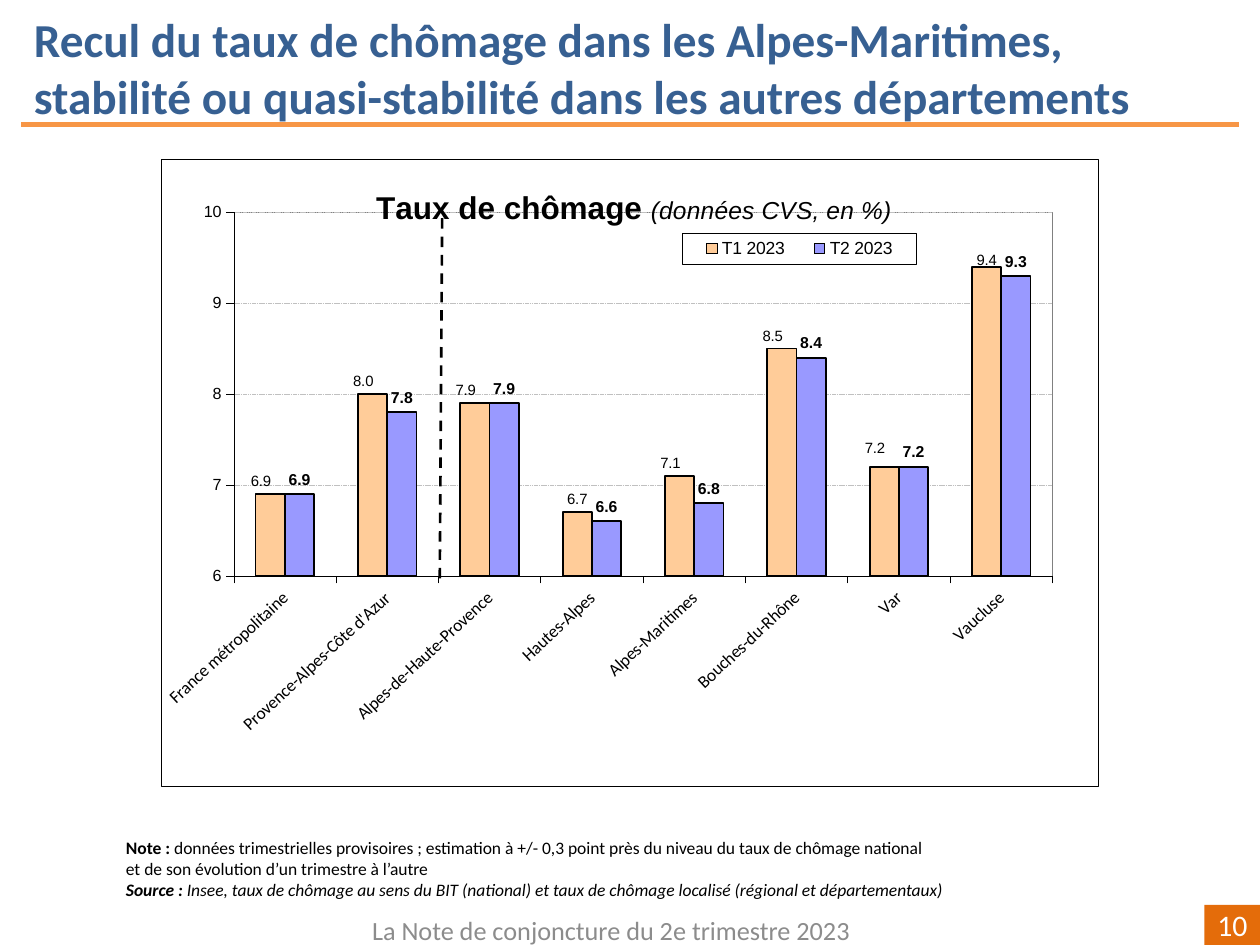
from lxml import etree
from pptx import Presentation
from pptx import util as u
from pptx.chart import data as chart_data
from pptx.dml import color
from pptx.enum import chart as charts, dml, shapes, text
from pptx.oxml import ns, parse_xml

Pt = u.Pt
COLOURS = {
    "title": "376092", "rule": "F79646", "badge": "E46C0A", "footer": "8C8C8C",
    "black": "000000", "white": "FFFFFF", "grid": "C0C0C0", "frame": "808080",
    "first": "FFCC99", "second": "9999FF", "highlight": "FFFF00",
}
TITLE = [
    [("Recul du taux de chômage dans les Alpes-Maritimes,", {})],
    [("stabilité ou quasi-stabilité dans les autres départements", {})],
]
NOTES = [
    [("Note : ", {"bold": True}),
     ("données trimestrielles provisoires ; estimation à +/- 0,3 point près du niveau du taux de chômage national", {})],
    [("et de son évolution d’un trimestre à l’autre", {})],
    [("Source : ", {"bold": True, "italic": True}),
     ("Insee, taux de chômage au sens du BIT (national) et taux de chômage localisé (régional et départementaux)",
      {"italic": True})],
]
FOOTER = [[("La Note de conjoncture du 2e trimestre 2023", {})]]
PAGE_NUMBER = [[("10", {})]]
CHART_TITLE = [[("Taux de chômage ", {"size": 18, "bold": True}),
                ("(données CVS, en %)", {"size": 14, "italic": True})]]
AREAS = ["France métropolitaine", "Provence-Alpes-Côte d'Azur", "Alpes-de-Haute-Provence",
         "Hautes-Alpes", "Alpes-Maritimes", "Bouches-du-Rhône", "Var", "Vaucluse"]
RATES = {
    "T1 2023": [6.9, 8.0, 7.9, 6.7, 7.1, 8.5, 7.2, 9.4],
    "T2 2023": [6.9, 7.8, 7.9, 6.6, 6.8, 8.4, 7.2, 9.3],
}
STYLES = [("first", 8.5, False), ("second", 9, True)]
LABEL_SHIFTS = {0: (-0.01, 0), 1: (-0.01, 0), 2: (-0.01, 0), 4: (-0.01, 0),
                5: (-0.01, 0), 6: (-0.01, -0.01), 7: (0, 0.01)}
HIGHLIGHTED = [0, 1]


def rgb(name):
    return color.RGBColor.from_string(COLOURS[name])


def style_font(font, size, colour="black", face="Arial", bold=False, italic=False):
    font.size, font.name, font.bold, font.italic = Pt(size), face, bold, italic
    font.color.rgb = rgb(colour)


def write(frame, paragraphs, align=text.PP_ALIGN.LEFT, **style):
    for index, spans in enumerate(paragraphs):
        para = frame.paragraphs[0] if index == 0 else frame.add_paragraph()
        para.alignment = align
        for words, changes in spans:
            span = para.add_run()
            span.text = words
            style_font(span.font, **{**style, **changes})


def set_frame(frame, anchor, margins=(7.2, 3.6, 7.2, 3.6)):
    frame.word_wrap = True
    frame.auto_size = text.MSO_AUTO_SIZE.NONE
    frame.vertical_anchor = anchor
    (frame.margin_left, frame.margin_top,
     frame.margin_right, frame.margin_bottom) = map(Pt, margins)
    return frame


def add_text(page, place, paragraphs, anchor, margins=(7.2, 3.6, 7.2, 3.6), **style):
    box = page.shapes.add_textbox(*map(Pt, place))
    write(set_frame(box.text_frame, anchor, margins), paragraphs, **style)


def add_line(page, ends, colour, width, dash=None):
    line = page.shapes.add_connector(shapes.MSO_CONNECTOR.STRAIGHT, *map(Pt, ends))
    line.line.color.rgb, line.line.width = rgb(colour), Pt(width)
    if dash:
        line.line.dash_style = dash
    etree.SubElement(line._element.spPr, ns.qn("a:effectLst"))


def chart_xml(tag, content):
    return parse_xml(f'<c:{tag} {ns.nsdecls("c", "a")}>{content}</c:{tag}>')


def layout(x, y, width=None, height=None, inner=False, edge=True):
    parts = ['<c:layoutTarget val="inner"/>'] if inner else []
    if edge:
        parts += ['<c:xMode val="edge"/>', '<c:yMode val="edge"/>']
    sizes = {"x": x, "y": y, "w": width, "h": height}
    parts += [f'<c:{key} val="{value}"/>' for key, value in sizes.items() if value is not None]
    return chart_xml("layout", f'<c:manualLayout>{"".join(parts)}</c:manualLayout>')


def area(fill, line=None):
    paint = '<a:solidFill><a:srgbClr val="{}"/></a:solidFill>'
    border = f'<a:ln w="3175">{paint.format(COLOURS[line])}</a:ln>' if line else ""
    return chart_xml("spPr", paint.format(COLOURS[fill]) + border)


def replace_layout(parent, new, before):
    for old in parent.findall(ns.qn("c:layout")):
        parent.remove(old)
    if before is None:
        parent.insert(0, new)
    else:
        parent.find(ns.qn(before)).addnext(new)


def format_label(series, index, size, bold, shift=None, fill=None):
    label = series.points[index].data_label
    style_font(label.font, size, bold=bold)
    label.position = charts.XL_LABEL_POSITION.OUTSIDE_END
    anchor = series._element.xpath(f'c:dLbls/c:dLbl/c:idx[@val="{index}"]')[0]
    number = chart_xml("numFmt", "")
    number.set("formatCode", "0.0")
    number.set("sourceLinked", "0")
    parts = [layout(*shift, edge=False)] if shift else []
    parts.append(number)
    if fill:
        parts.append(area(fill))
    for part in reversed(parts):
        anchor.addnext(part)


def format_axis(axis, size, face):
    style_font(axis.tick_labels.font, size, face=face)
    axis.major_tick_mark = charts.XL_TICK_MARK.OUTSIDE
    axis.minor_tick_mark = charts.XL_TICK_MARK.NONE
    axis.format.line.color.rgb, axis.format.line.width = rgb("black"), Pt(0.25)


def add_rate_chart(page):
    source = chart_data.CategoryChartData(number_format="0.0")
    source.categories = AREAS
    for name, values in RATES.items():
        source.add_series(name, values)
    chart = page.shapes.add_chart(charts.XL_CHART_TYPE.COLUMN_CLUSTERED,
                                  *map(Pt, (92.2, 90.8, 535.6, 358.4)), source).chart
    style_font(chart.font, 8.5)
    chart.has_title = True
    write(chart.chart_title.text_frame, CHART_TITLE, text.PP_ALIGN.CENTER)
    title = chart.chart_title._element
    replace_layout(title, layout(0.225, 0.04), "c:tx")
    for overlay in title.findall(ns.qn("c:overlay")):
        overlay.set("val", "1")
    chart.has_legend = True
    legend = chart.legend
    legend.position = charts.XL_LEGEND_POSITION.RIGHT
    legend.include_in_layout = False
    style_font(legend.font, 10)
    replace_layout(legend._element, layout(0.556, 0.118, 0.25, 0.05), "c:legendPos")
    legend._element.find(ns.qn("c:overlay")).addnext(area("white", "black"))

    format_axis(chart.category_axis, 10, "Calibri")
    chart.category_axis._element.xpath("c:txPr/a:bodyPr")[0].set("rot", "-2580000")
    values = chart.value_axis
    format_axis(values, 9.2, "Arial")
    values.minimum_scale, values.maximum_scale, values.major_unit = 6, 10, 1
    values.tick_labels.number_format = "0"
    values.tick_labels.number_format_is_linked = False
    grid = values.major_gridlines.format.line
    grid.color.rgb, grid.width = rgb("grid"), Pt(0.25)
    grid.dash_style = dml.MSO_LINE.SQUARE_DOT

    plot = chart.plots[0]
    plot.gap_width, plot.overlap, plot.vary_by_categories = 150, 0, False
    for series, (colour, size, bold) in zip(plot.series, STYLES):
        series.format.fill.solid()
        series.format.fill.fore_color.rgb = rgb(colour)
        series.format.line.color.rgb, series.format.line.width = rgb("black"), Pt(1)
        labels = series.data_labels
        labels.show_value = True
        labels.number_format, labels.number_format_is_linked = "0.0", False
        labels.position = charts.XL_LABEL_POSITION.OUTSIDE_END
        style_font(labels.font, size, bold=bold)
    first, second = plot.series
    for index, shift in LABEL_SHIFTS.items():
        format_label(first, index, 8.5, False, shift=shift)
    for index in HIGHLIGHTED:
        format_label(second, index, 9, True, fill="highlight")

    root = chart._chartSpace
    plot_area = root.xpath("c:chart/c:plotArea")[0]
    replace_layout(plot_area, layout(0.077, 0.085, 0.874, 0.58, inner=True), None)
    plot_area.append(area("white", "frame"))
    root.find(ns.qn("c:chart")).addnext(area("white", "black"))


def main():
    deck = Presentation()
    deck.slide_width, deck.slide_height = Pt(720), Pt(540)
    page = deck.slides.add_slide(deck.slide_layouts[5])
    title = page.shapes.title
    title.left, title.top, title.width, title.height = map(Pt, (12.2, 2.2, 725.8, 72.7))
    write(set_frame(title.text_frame, text.MSO_ANCHOR.TOP), TITLE,
          size=27, colour="title", face="Calibri", bold=True)
    add_line(page, (12.2, 71.3, 707.8, 71.3), "rule", 3)
    badge = page.shapes.add_shape(shapes.MSO_SHAPE.RECTANGLE, *map(Pt, (688.3, 517, 31.7, 23)))
    badge.shadow.inherit = False
    badge.fill.solid()
    badge.fill.fore_color.rgb = rgb("badge")
    badge.line.fill.background()
    write(set_frame(badge.text_frame, text.MSO_ANCHOR.MIDDLE), PAGE_NUMBER,
          text.PP_ALIGN.RIGHT, size=17, colour="white", face="Calibri")
    add_text(page, (173.5, 517, 351.4, 28.8), FOOTER, text.MSO_ANCHOR.MIDDLE,
             align=text.PP_ALIGN.CENTER, size=15, colour="footer", face="Calibri")
    add_text(page, (70.6, 476, 491.8, 38.2), NOTES, text.MSO_ANCHOR.TOP,
             margins=(1.4, 2.2, 0, 0), size=10, face="Calibri")
    add_rate_chart(page)
    add_line(page, (251.3, 330.5, 252.7, 122.4), "black", 1.5, dml.MSO_LINE.DASH)
    deck.save("out.pptx")


if __name__ == "__main__":
    main()
